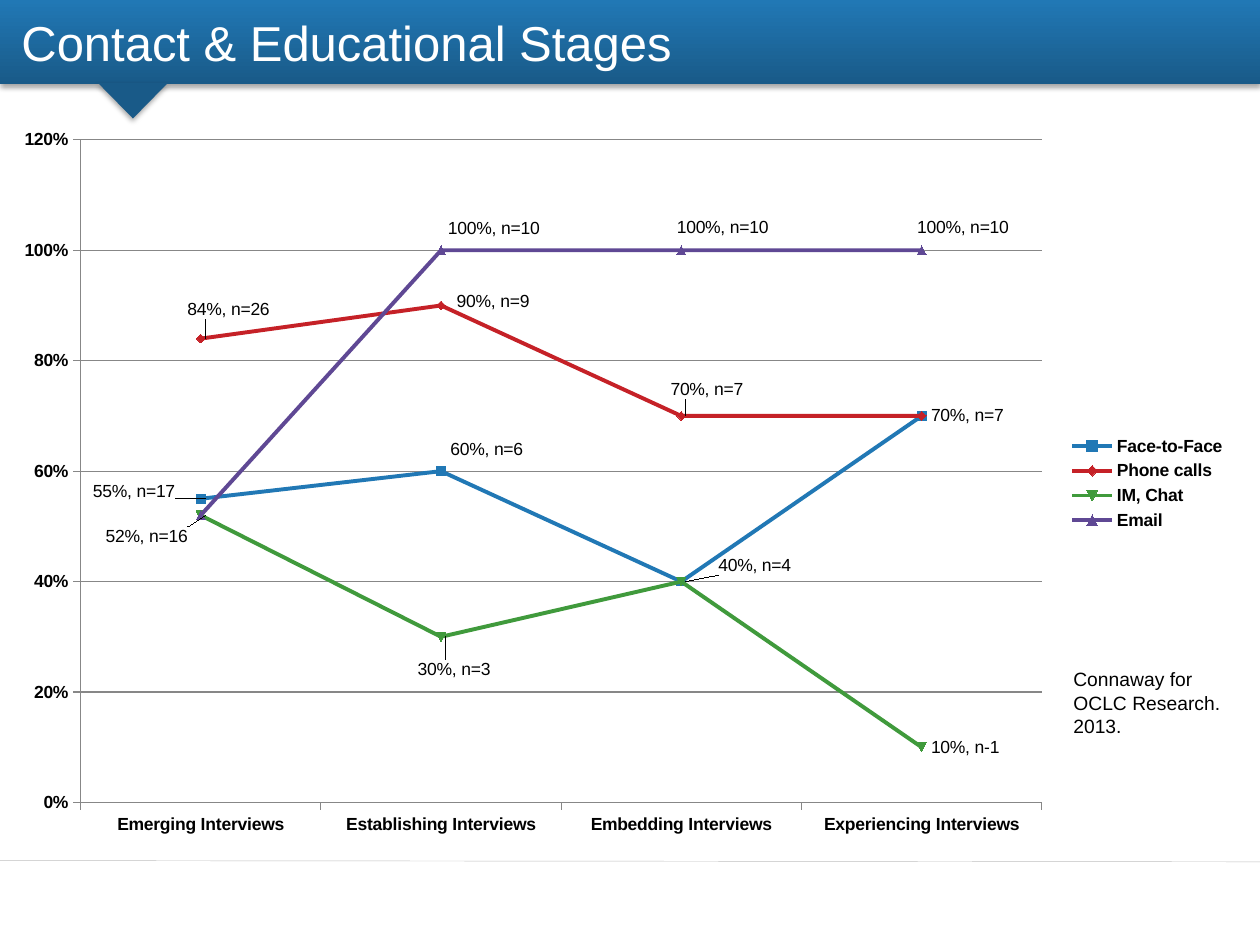
from pptx import Presentation
from pptx.chart.data import CategoryChartData
from pptx.dml.color import RGBColor
from pptx.enum.chart import (XL_CHART_TYPE, XL_LABEL_POSITION,
                             XL_LEGEND_POSITION, XL_TICK_MARK)
from pptx.enum.shapes import MSO_CONNECTOR, MSO_SHAPE
from pptx.enum.text import MSO_ANCHOR, MSO_AUTO_SIZE, PP_ALIGN
from pptx.oxml import parse_xml
from pptx.oxml.ns import nsdecls
from pptx.util import Inches, Pt

FONT = "Arial"
COLORS = {
    "white": "FFFFFF", "black": "000000", "rule": "BFBFBF", "grid": "878787",
    "dark": "195A88", "blue": "2178B5", "red": "C52127",
    "green": "409A3C", "purple": "5F4894",
}
CHART_W, CHART_H = 9.83, 5.83
STAGES = ["Emerging", "Establishing", "Embedding", "Experiencing"]
# Name, colour, values, labels as {point: (text, right, down)}, shifts in inches
SERIES = [
    ("Face-to-Face", "blue", (0.55, 0.6, 0.4, 0.7), {
        0: ("55%, n=17", -0.93, -0.06), 1: ("60%, n=6", 0, -0.17),
        2: ("40%, n=4", 0.22, -0.13)}),
    ("Phone calls", "red", (0.84, 0.9, 0.7, 0.7), {
        0: ("84%, n=26", -0.18, -0.23), 1: ("90%, n=9", 0.05, -0.03),
        2: ("70%, n=7", -0.16, -0.21), 3: ("70%, n=7", 0, 0)}),
    ("IM, Chat", "green", (0.52, 0.3, 0.4, 0.1), {
        1: ("30%, n=3", -0.26, 0.26), 3: ("10%, n-1", 0, 0)}),
    ("Email", "purple", (0.52, 1, 1, 1), {
        0: ("52%, n=16", -0.83, 0.17), 1: ("100%, n=10", -0.02, -0.17),
        2: ("100%, n=10", -0.11, -0.18), 3: ("100%, n=10", -0.11, -0.18)}),
]


def rgb(name):
    return RGBColor.from_string(COLORS[name])


def style(font, size, color, bold=False):
    font.name, font.size, font.bold = FONT, Pt(size), bold
    font.color.rgb = rgb(color)


def add_rule(slide):
    rule = slide.shapes.add_connector(
        MSO_CONNECTOR.STRAIGHT, Inches(0), Inches(6.83), Inches(10), Inches(6.84))
    rule.line.color.rgb = rgb("rule")
    rule.line.width = Pt(0.25)
    rule._element.spPr.append(parse_xml(f"<a:effectLst {nsdecls('a')}/>"))


def add_panel(slide, kind, box):
    """Add a borderless dark shape with a soft shadow below it."""
    panel = slide.shapes.add_shape(kind, *map(Inches, box))
    panel.fill.solid()
    panel.fill.fore_color.rgb = rgb("dark")
    panel.line.fill.background()
    panel.shadow.inherit = False
    panel._element.spPr.find("{*}effectLst").append(parse_xml(
        f'<a:outerShdw {nsdecls("a")} blurRad="{Pt(3.1)}" dist="{Pt(1.8)}" '
        f'dir="5400000" rotWithShape="0"><a:srgbClr val="{COLORS["black"]}">'
        '<a:alpha val="35000"/></a:srgbClr></a:outerShdw>'))
    return panel


def add_banner(slide):
    bar = add_panel(slide, MSO_SHAPE.RECTANGLE, (0, 0, 10, 0.67))
    bar.fill.gradient()
    bar.fill.gradient_angle = 90
    for stop, color, pos in zip(bar.fill.gradient_stops, ("dark", "blue"), (0, 1)):
        stop.color.rgb = rgb(color)
        stop.position = pos
    arrow = add_panel(slide, MSO_SHAPE.ISOSCELES_TRIANGLE, (0.78, 0.66, 0.55, 0.28))
    arrow.rotation = 180


def set_title(slide, text):
    title = slide.shapes.title
    title.left, title.top = Inches(0.17), Inches(0)
    title.width, title.height = Inches(9.33), Inches(0.67)
    frame = title.text_frame
    frame.text = text
    frame.auto_size = MSO_AUTO_SIZE.NONE
    frame.word_wrap = False
    frame.vertical_anchor = MSO_ANCHOR.MIDDLE
    frame.margin_left = frame.margin_right = 0
    frame.paragraphs[0].alignment = PP_ALIGN.LEFT
    style(frame.paragraphs[0].runs[0].font, 28, "white")
    slide.shapes._spTree.append(title._element)  # in front of the banner


def layout(x, y, size=""):
    return parse_xml(
        f'<c:layout {nsdecls("c")}><c:manualLayout>{size and INNER}'
        f'<c:x val="{x:.4f}"/><c:y val="{y:.4f}"/>{size}'
        '</c:manualLayout></c:layout>')


INNER = ('<c:layoutTarget val="inner"/><c:xMode val="edge"/>'
         '<c:yMode val="edge"/>')


def place_plot(chart, left, top, width, height):
    area = chart._chartSpace.chart.plotArea
    for old in area.findall("{*}layout"):
        area.remove(old)
    size = (f'<c:w val="{width / CHART_W:.4f}"/>'
            f'<c:h val="{height / CHART_H:.4f}"/>')
    area.insert(0, layout(left / CHART_W, top / CHART_H, size))


def style_axes(chart):
    value = chart.value_axis
    value.minimum_scale, value.maximum_scale, value.major_unit = 0, 1.2, 0.2
    value.tick_labels.number_format = "0%"
    value.tick_labels.number_format_is_linked = False
    value.has_major_gridlines = True
    for axis in (value, chart.category_axis):
        axis.major_tick_mark = XL_TICK_MARK.OUTSIDE
        style(axis.tick_labels.font, 10, "black", True)
        axis.format.line.color.rgb = rgb("grid")
        axis.format.line.width = Pt(0.75)
    grid = value.major_gridlines.format.line
    grid.color.rgb = rgb("grid")
    grid.width = Pt(0.75)


def style_series(series, color, labels):
    series.smooth = False
    series.format.line.color.rgb = rgb(color)
    series.format.line.width = Pt(2.25)
    mark = series.marker
    mark.size = 5
    mark.format.fill.solid()
    mark.format.fill.fore_color.rgb = rgb(color)
    mark.format.line.color.rgb = rgb(color)
    series.data_labels.show_value = False
    for i, (text, _, _) in labels.items():
        label = series.points[i].data_label
        label.text_frame.text = text
        style(label.text_frame.paragraphs[0].runs[0].font, 10, "black")
        label.position = XL_LABEL_POSITION.RIGHT
    for node, (_, right, down) in zip(
            series._element.xpath("c:dLbls/c:dLbl"), labels.values()):
        if right or down:
            node.insert(1, layout(right / CHART_W, down / CHART_H))


def add_lines(slide):
    data = CategoryChartData(number_format="0%")
    data.categories = [f"{stage} Interviews" for stage in STAGES]
    for name, _, values, _ in SERIES:
        data.add_series(name, values)
    chart = slide.shapes.add_chart(
        XL_CHART_TYPE.LINE_MARKERS, Inches(0), Inches(0.92),
        Inches(CHART_W), Inches(CHART_H), data).chart
    style(chart.font, 10, "black")
    chart.has_title = False
    chart.has_legend = True
    chart.legend.position = XL_LEGEND_POSITION.RIGHT
    chart.legend.include_in_layout = False
    style(chart.legend.font, 10, "black", True)
    chart.plots[0].vary_by_categories = False
    place_plot(chart, 0.64, 0.19, 7.63, 5.26)
    style_axes(chart)
    for series, (_, color, _, labels) in zip(chart.plots[0].series, SERIES):
        style_series(series, color, labels)


def add_credit(slide, text):
    box = slide.shapes.add_textbox(
        Inches(8.42), Inches(5.25), Inches(1.42), Inches(0.92))
    box.text_frame.word_wrap = True
    box.text_frame.text = text
    style(box.text_frame.paragraphs[0].runs[0].font, 11, "black")


def main():
    deck = Presentation()
    deck.slide_width, deck.slide_height = Inches(10), Inches(7.5)
    slide = deck.slides.add_slide(deck.slide_layouts[5])
    add_rule(slide)
    add_banner(slide)
    set_title(slide, "Contact & Educational Stages")
    add_lines(slide)
    add_credit(slide, "Connaway for OCLC Research. 2013.")
    deck.save("out.pptx")


if __name__ == "__main__":
    main()
